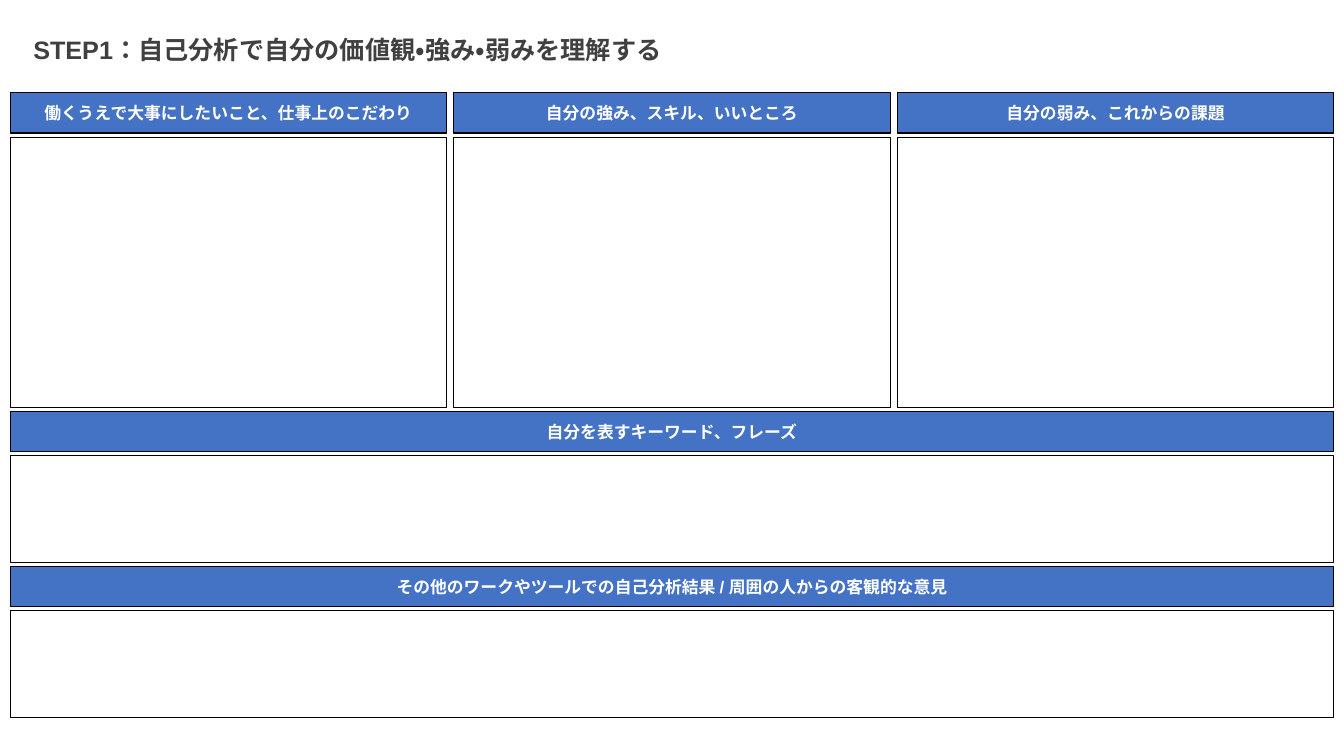
from dataclasses import dataclass

from pptx import Presentation
from pptx.dml.color import RGBColor
from pptx.enum.lang import MSO_LANGUAGE_ID
from pptx.enum.shapes import MSO_SHAPE
from pptx.enum.text import MSO_ANCHOR, MSO_AUTO_SIZE, PP_ALIGN
from pptx.util import Inches, Pt


@dataclass(frozen=True)
class Theme:
    font: str = "Arial"
    title_size: int = 18
    header_size: int = 12
    title_color: str = "404040"
    header_fill: str = "4472C4"
    header_color: str = "FFFFFF"
    body_fill: str = "FFFFFF"
    outline: str = "000000"
    outline_width: float = 0.75


THEME = Theme()

# Grid in inches
SLIDE_WIDTH, SLIDE_HEIGHT = 13.33, 7.5
MARGIN = 0.1
GRID_TOP = 0.92
GRID_WIDTH = SLIDE_WIDTH - 2 * MARGIN
COLUMN_GAP, ROW_GAP = 0.07, 0.04
HEADER_HEIGHT = 0.4

TITLE = "STEP1：自己分析で自分の価値観・強み・弱みを理解する"

# Each band: height of the writing area, and one heading per column
BANDS = [
    (2.68, ["働くうえで大事にしたいこと、仕事上のこだわり",
            "自分の強み、スキル、いいところ",
            "自分の弱み、これからの課題"]),
    (1.06, ["自分を表すキーワード、フレーズ"]),
    (1.06, ["その他のワークやツールでの自己分析結果 / 周囲の人からの客観的な意見"]),
]


def write_text(shape, text, *, size, color, align, anchor, wrap):
    frame = shape.text_frame
    frame.word_wrap = wrap
    frame.vertical_anchor = anchor
    paragraph = frame.paragraphs[0]
    paragraph.alignment = align
    run = paragraph.add_run()
    run.text = text
    run.font.name = THEME.font
    run.font.size = Pt(size)
    run.font.bold = True
    run.font.color.rgb = RGBColor.from_string(color)
    run.font.language_id = MSO_LANGUAGE_ID.JAPANESE


def add_box(slide, left, top, width, height, fill):
    box = slide.shapes.add_shape(
        MSO_SHAPE.RECTANGLE,
        Inches(left), Inches(top), Inches(width), Inches(height))
    box.shadow.inherit = False
    box.fill.solid()
    box.fill.fore_color.rgb = RGBColor.from_string(fill)
    box.line.color.rgb = RGBColor.from_string(THEME.outline)
    box.line.width = Pt(THEME.outline_width)
    return box


def add_band(slide, top, body_height, headings):
    """Add headed writing areas side by side; return the next band's top."""
    count = len(headings)
    width = (GRID_WIDTH - (count - 1) * COLUMN_GAP) / count
    body_top = top + HEADER_HEIGHT + ROW_GAP
    for column, heading in enumerate(headings):
        left = MARGIN + column * (width + COLUMN_GAP)
        header = add_box(slide, left, top, width, HEADER_HEIGHT, THEME.header_fill)
        write_text(header, heading, size=THEME.header_size,
                   color=THEME.header_color, align=PP_ALIGN.CENTER,
                   anchor=MSO_ANCHOR.MIDDLE, wrap=False)
        add_box(slide, left, body_top, width, body_height, THEME.body_fill)
    return body_top + body_height + ROW_GAP


def set_title(slide):
    title = slide.shapes.title
    title.left, title.top = Inches(0.23), Inches(0.29)
    title.width, title.height = Inches(7.86), Inches(0.4)
    write_text(title, TITLE, size=THEME.title_size, color=THEME.title_color,
               align=PP_ALIGN.LEFT, anchor=MSO_ANCHOR.TOP, wrap=True)
    title.text_frame.auto_size = MSO_AUTO_SIZE.SHAPE_TO_FIT_TEXT


def main():
    presentation = Presentation()
    presentation.slide_width = Inches(SLIDE_WIDTH)
    presentation.slide_height = Inches(SLIDE_HEIGHT)
    title_only = presentation.slide_layouts[5]
    slide = presentation.slides.add_slide(title_only)

    set_title(slide)

    # Worksheet bands, stacked from the top
    top = GRID_TOP
    for body_height, headings in BANDS:
        top = add_band(slide, top, body_height, headings)

    presentation.save("out.pptx")


if __name__ == "__main__":
    main()
